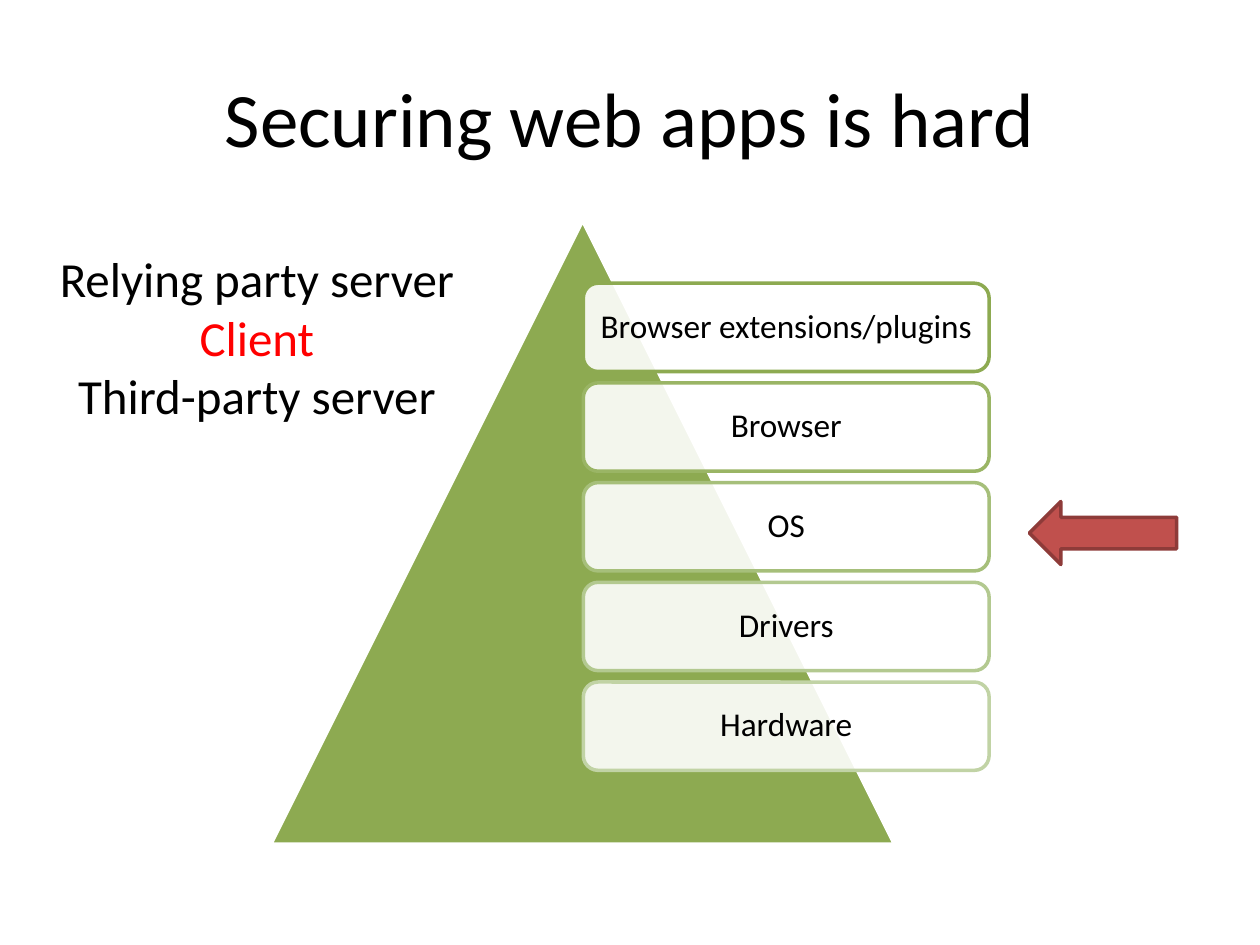
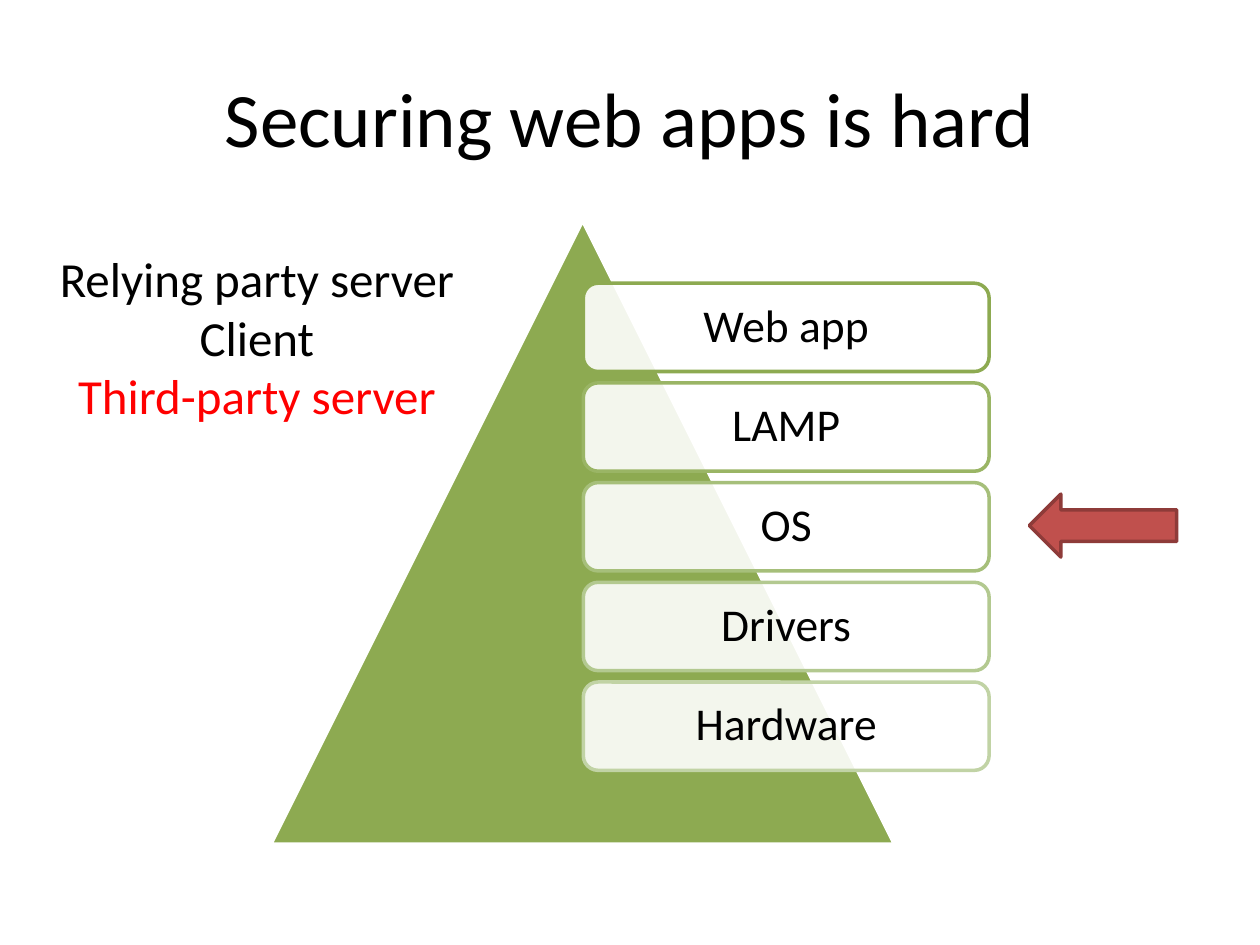
"""Build two slides on the layers that make web apps hard to secure."""
from lxml import etree
from pptx import Presentation
from pptx import util as u
from pptx.dml.color import RGBColor
from pptx.enum import shapes, text
from pptx.oxml import ns

TITLE = "Securing web apps is hard"
PARTIES = ["Relying party server", "Client", "Third-party server"]
SLIDES = [
    {"active": "Client", "size": 19, "inset": 0.2, "arrow_top": 10.11,
     "layers": ["Browser extensions/plugins", "Browser", "OS", "Drivers", "Hardware"]},
    {"active": "Third-party server", "size": 26, "inset": 0.28, "arrow_top": 9.96,
     "layers": ["Web app", "LAMP", "OS", "Drivers", "Hardware"]},
]

FONT = "Calibri"
COLORS = {"text": "000000", "active": "FF0000", "paper": "FFFFFF",
          "pyramid": "8DAA51", "arrow": "C0504D", "arrow_edge": "8E3B39"}
LAYER_EDGES = ["8DAA51", "9AB565", "A6BF7A", "B3C990", "C1D3A5"]
LAYER_LEFT, LAYER_TOP, LAYER_WIDTH, LAYER_HEIGHT = 11.76, 5.71, 8.18, 1.78
LAYER_PITCH = 2.01


def write(box, lines, size, highlight=None, anchor=text.MSO_ANCHOR.MIDDLE,
          inset=None, spacing=None, wrap=True):
    frame = box.text_frame
    frame.word_wrap = wrap
    frame.vertical_anchor = anchor
    if inset is not None:
        frame.margin_left = frame.margin_right = u.Cm(inset)
        frame.margin_top = frame.margin_bottom = u.Cm(inset)
    for index, line in enumerate(lines):
        para = frame.paragraphs[0] if index == 0 else frame.add_paragraph()
        para.alignment = text.PP_ALIGN.CENTER
        para.line_spacing = spacing
        span = para.add_run()
        span.text = line
        span.font.name = FONT
        span.font.size = u.Pt(size)
        color = COLORS["active" if line == highlight else "text"]
        span.font.color.rgb = RGBColor.from_string(color)


def add_box(page, left, top, width, height):
    return page.shapes.add_textbox(*map(u.Cm, (left, top, width, height)))


def add_figure(page, kind, left, top, width, height, fill, edge, opacity=100):
    figure = page.shapes.add_shape(kind, *map(u.Cm, (left, top, width, height)))
    figure.shadow.inherit = False
    figure.fill.solid()
    figure.fill.fore_color.rgb = RGBColor.from_string(fill)
    figure.line.color.rgb = RGBColor.from_string(edge)
    figure.line.width = u.Pt(2)
    if opacity < 100:
        color = figure.fill._xPr.find(ns.qn("a:solidFill"))[0]
        etree.SubElement(color, ns.qn("a:alpha"), val=str(opacity * 1000))
    return figure


def add_page(deck, content):
    page = deck.slides.add_slide(deck.slide_layouts[6])
    preset = shapes.MSO_SHAPE
    write(add_box(page, 1.27, 0.76, 22.86, 3.18), [TITLE], 44)
    add_figure(page, preset.ISOSCELES_TRIANGLE, 5.46, 4.45, 12.57, 12.57,
               COLORS["pyramid"], COLORS["paper"])
    for row, (name, edge) in enumerate(zip(content["layers"], LAYER_EDGES)):
        layer = add_figure(page, preset.ROUNDED_RECTANGLE, LAYER_LEFT,
                           LAYER_TOP + row * LAYER_PITCH, LAYER_WIDTH,
                           LAYER_HEIGHT, COLORS["paper"], edge, opacity=90)
        write(layer, [name], content["size"], inset=content["inset"], spacing=0.9)
    arrow = add_figure(page, preset.RIGHT_ARROW, 20.75, content["arrow_top"],
                       2.97, 1.27, COLORS["arrow"], COLORS["arrow_edge"])
    arrow.rotation = 180
    write(add_box(page, 0.88, 4.88, 8.6, 3.84), PARTIES, 28,
          highlight=content["active"], anchor=text.MSO_ANCHOR.TOP, wrap=False)


def main():
    deck = Presentation()
    deck.slide_width, deck.slide_height = u.Cm(25.4), u.Cm(19.05)
    for content in SLIDES:
        add_page(deck, content)
    deck.save("out.pptx")


if __name__ == "__main__":
    main()
